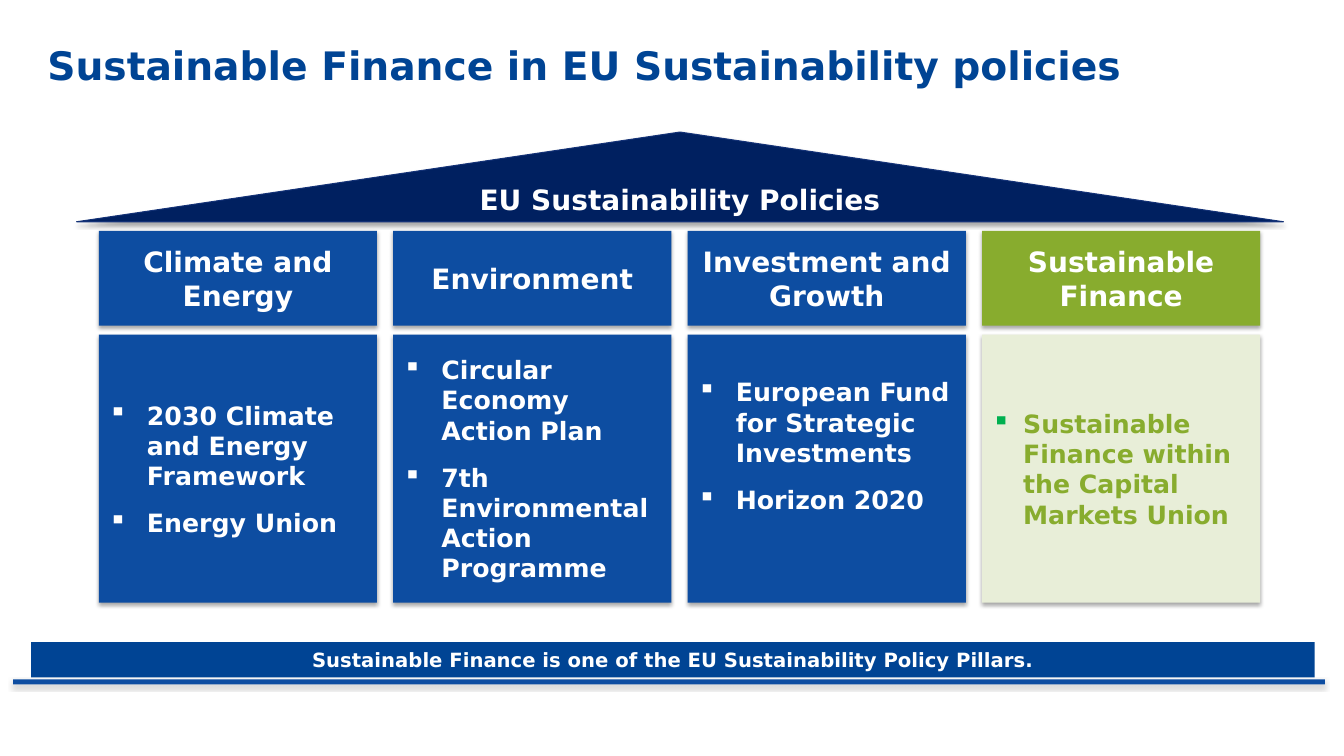
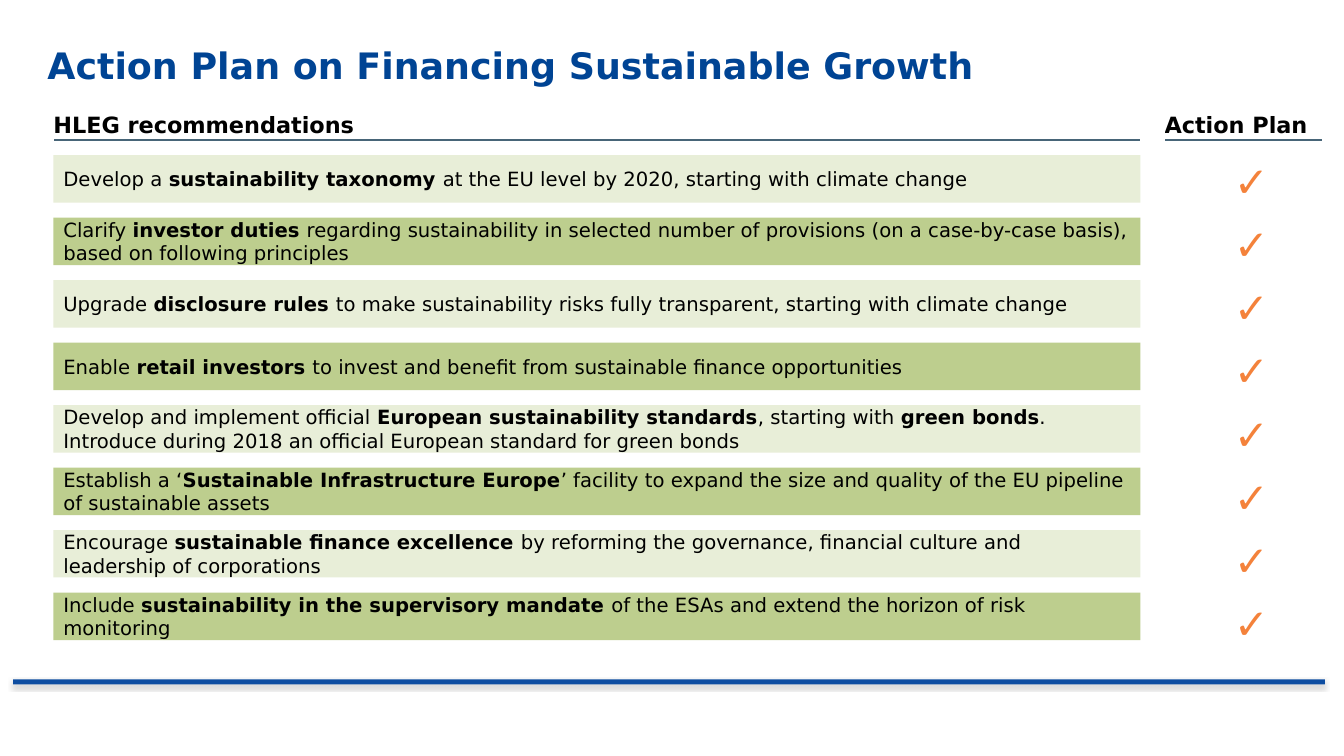
from dataclasses import dataclass

from lxml.etree import SubElement
from pptx import Presentation
from pptx.dml.color import RGBColor
from pptx.enum.shapes import MSO_SHAPE as Preset
from pptx.enum.text import MSO_ANCHOR as Anchor, MSO_AUTO_SIZE as AutoSize, PP_ALIGN as Align
from pptx.oxml import parse_xml
from pptx.oxml.ns import nsdecls, qn
from pptx.shapes.autoshape import Shape
from pptx.slide import Slide, SlideLayout
from pptx.text.text import TextFrame
from pptx.util import Emu, Pt

PX = 9144  # EMU per px, 100 px to the inch
FONT = "DejaVu Sans"
COLORS = {
    "title": "004494",
    "pillar": "0D4DA1",
    "roof": "002060",
    "roof_edge": "133176",
    "green": "88AC2E",
    "mid_green": "BDCE8E",
    "pale_green": "E8EED8",
    "bullet_green": "00B050",
    "rule": "476578",
    "check": "F4823B",
    "band_shadow": "808080",
    "black": "000000",
    "white": "FFFFFF",
}


@dataclass(frozen=True)
class Box:
    left: int
    top: int
    width: int
    height: int

    def emu(self) -> tuple[Emu, ...]:
        return tuple(Emu(n * PX) for n in (self.left, self.top, self.width, self.height))


@dataclass(frozen=True)
class TextStyle:
    size: int
    color: str
    bold: bool = True
    align: Align = Align.CENTER


@dataclass(frozen=True)
class Pillar:
    heading: str
    policies: tuple[str, ...]
    head_fill: str = "pillar"
    body_fill: str = "pillar"
    text: str = "white"
    bullet: str = "white"
    indent: int = 38
    bottom_inset: int = 5


PILLARS = (
    Pillar("Climate and Energy", ("2030 Climate and Energy Framework", "Energy Union")),
    Pillar("Environment",
           ("Circular Economy Action Plan", "7th Environmental Action Programme")),
    Pillar("Investment and Growth",
           ("European Fund for Strategic Investments", "Horizon 2020"), bottom_inset=51),
    Pillar("Sustainable Finance", ("Sustainable Finance within the Capital Markets Union",),
           "green", "pale_green", "green", "bullet_green", 31),
)

# Asterisk pairs enclose the bold words
RECOMMENDATIONS = (
    "Develop a **sustainability taxonomy **at the EU level by 2020, starting with climate change",
    "Clarify **investor duties **regarding sustainability in selected number of provisions "
    "(on a case-by-case basis), based on following principles",
    "Upgrade **disclosure rules **to make sustainability risks fully transparent, "
    "starting with climate change",
    "Enable **retail investors **to invest and benefit from sustainable finance opportunities",
    "Develop and implement official **European sustainability standards**, starting with "
    "**green bonds**. Introduce during 2018 an official European standard for green bonds",
    "Establish a ‘**Sustainable Infrastructure Europe**’ facility to expand the size and "
    "quality of the EU pipeline of sustainable assets",
    "Encourage **sustainable finance excellence **by reforming the governance, "
    "financial culture and leadership of corporations",
    "Include **sustainability in the supervisory mandate **of the ESAs and extend "
    "the horizon of risk monitoring",
)

TITLE_BOX = Box(37, 29, 1268, 71)
BAND_BOX = Box(13, 674, 1301, 5)
HEADING = TextStyle(20, "white")


def rgb(name: str) -> RGBColor:
    return RGBColor.from_string(COLORS[name])


# Text
def format_runs(frame: TextFrame, style: TextStyle) -> None:
    for paragraph in frame.paragraphs:
        paragraph.alignment = style.align
        for run in paragraph.runs:
            run.font.name = FONT
            run.font.size = Pt(style.size)
            run.font.bold = style.bold
            run.font.color.rgb = rgb(style.color)


def write(frame: TextFrame, text: str, style: TextStyle) -> None:
    frame.word_wrap = True
    frame.text = text
    format_runs(frame, style)


def write_marked(frame: TextFrame, marked: str, style: TextStyle) -> None:
    frame.word_wrap = True
    paragraph = frame.paragraphs[0]
    pieces = marked.split("**")
    for piece in pieces:
        paragraph.add_run().text = piece
    format_runs(frame, style)
    for emphasis in paragraph.runs[1::2]:
        emphasis.font.bold = True


def write_list(frame: TextFrame, pillar: Pillar) -> None:
    frame.word_wrap = True
    frame.margin_bottom = Emu(pillar.bottom_inset * PX)
    frame.text = "\n".join(pillar.policies)
    for paragraph in frame.paragraphs:
        props = paragraph._p.get_or_add_pPr()
        props.set("marL", str(pillar.indent * PX))
        props.set("indent", str(-pillar.indent * PX))
        bullet_color = SubElement(props, qn("a:buClr"))
        SubElement(bullet_color, qn("a:srgbClr"), val=COLORS[pillar.bullet])
        SubElement(props, qn("a:buChar"), char="▪")
        paragraph.space_after = Pt(12)
    format_runs(frame, TextStyle(18, pillar.text, align=Align.LEFT))


# Shapes
def add_block(slide: Slide, box: Box, fill: str, preset: Preset = Preset.RECTANGLE,
              shadow: str | None = None) -> Shape:
    block = slide.shapes.add_shape(preset, *box.emu())
    block.fill.solid()
    block.fill.fore_color.rgb = rgb(fill)
    block.line.fill.background()
    block.shadow.inherit = False
    if shadow:
        effects = block.element.spPr.find(qn("a:effectLst"))
        outer = SubElement(effects, qn("a:outerShdw"), blurRad="40000", dist="23000",
                           dir="5400000", rotWithShape="0")
        shade = SubElement(outer, qn("a:srgbClr"), val=COLORS[shadow])
        SubElement(shade, qn("a:alpha"), val="35000")
    return block


def add_column_heading(slide: Slide, box: Box, text: str) -> None:
    table = slide.shapes.add_table(1, 1, *box.emu()).table
    table.first_row = table.horz_banding = False
    cell = table.cell(0, 0)
    cell.fill.background()
    cell.margin_left = cell.margin_bottom = 0
    cell.margin_top = cell.margin_right = Emu(10 * PX)
    write(cell.text_frame, text, TextStyle(16, "black", align=Align.LEFT))
    rule = parse_xml(
        f'<a:lnB {nsdecls("a")} w="{Pt(2.25)}"><a:solidFill>'
        f'<a:srgbClr val="{COLORS["rule"]}"/></a:solidFill></a:lnB>')
    cell._tc.get_or_add_tcPr().insert(0, rule)


# Shared frame: title place and bottom band
def set_up_layout(layout: SlideLayout, first: Slide) -> None:
    title = layout.placeholders[0]
    title.left, title.top, title.width, title.height = TITLE_BOX.emu()
    title.text_frame.vertical_anchor = Anchor.MIDDLE
    title.text_frame.auto_size = AutoSize.NONE
    band = add_block(first, BAND_BOX, "pillar", shadow="band_shadow")
    title.element.getparent().append(band.element)


def set_title(slide: Slide, text: str, size: int) -> None:
    write(slide.shapes.title.text_frame, text, TextStyle(size, "title", align=Align.LEFT))


# Slide 1: house of policies
def draw_policies(slide: Slide) -> None:
    set_title(slide, "Sustainable Finance in EU Sustainability policies", 28)
    for i, pillar in enumerate(PILLARS):
        left = 98 + 292 * i
        body = add_block(slide, Box(left, 332, 276, 266), pillar.body_fill, shadow="black")
        write_list(body.text_frame, pillar)
        head = add_block(slide, Box(left, 229, 276, 94), pillar.head_fill, shadow="black")
        write(head.text_frame, pillar.heading, HEADING)

    roof = add_block(slide, Box(76, 131, 1197, 89), "roof", Preset.ISOSCELES_TRIANGLE, "black")
    roof.line.color.rgb = rgb("roof_edge")
    roof.line.width = Pt(0.75)
    write(roof.text_frame, "EU Sustainability Policies", HEADING)

    message = add_block(slide, Box(31, 637, 1273, 35), "title")
    write(message.text_frame, "Sustainable Finance is one of the EU Sustainability Policy Pillars.",
          TextStyle(14, "white"))


# Slide 2: recommendations with check marks
def draw_action_plan(slide: Slide) -> None:
    set_title(slide, "Action Plan on Financing Sustainable Growth", 26)
    add_column_heading(slide, Box(53, 102, 1078, 37), "HLEG recommendations")
    add_column_heading(slide, Box(1155, 102, 157, 37), "Action Plan")
    last = len(RECOMMENDATIONS) - 1
    for i, recommendation in enumerate(RECOMMENDATIONS):
        fill = "mid_green" if i % 2 else "pale_green"
        row = add_block(slide, Box(53, 154 + 62 * i, 1078, 47), fill)
        write_marked(row.text_frame, recommendation,
                     TextStyle(14, "black", bold=False, align=Align.LEFT))
        check_box = Box(1214, 149 + round(439 * i / last), 36, 61)
        check = slide.shapes.add_textbox(*check_box.emu())
        write(check.text_frame, "✓", TextStyle(30, "check"))


def main() -> None:
    deck = Presentation()
    deck.slide_width, deck.slide_height = Emu(1333 * PX), Emu(750 * PX)
    layout = deck.slide_layouts[5]
    policies, action_plan = (deck.slides.add_slide(layout) for _ in range(2))
    set_up_layout(layout, policies)
    draw_policies(policies)
    draw_action_plan(action_plan)
    deck.save("out.pptx")


if __name__ == "__main__":
    main()
